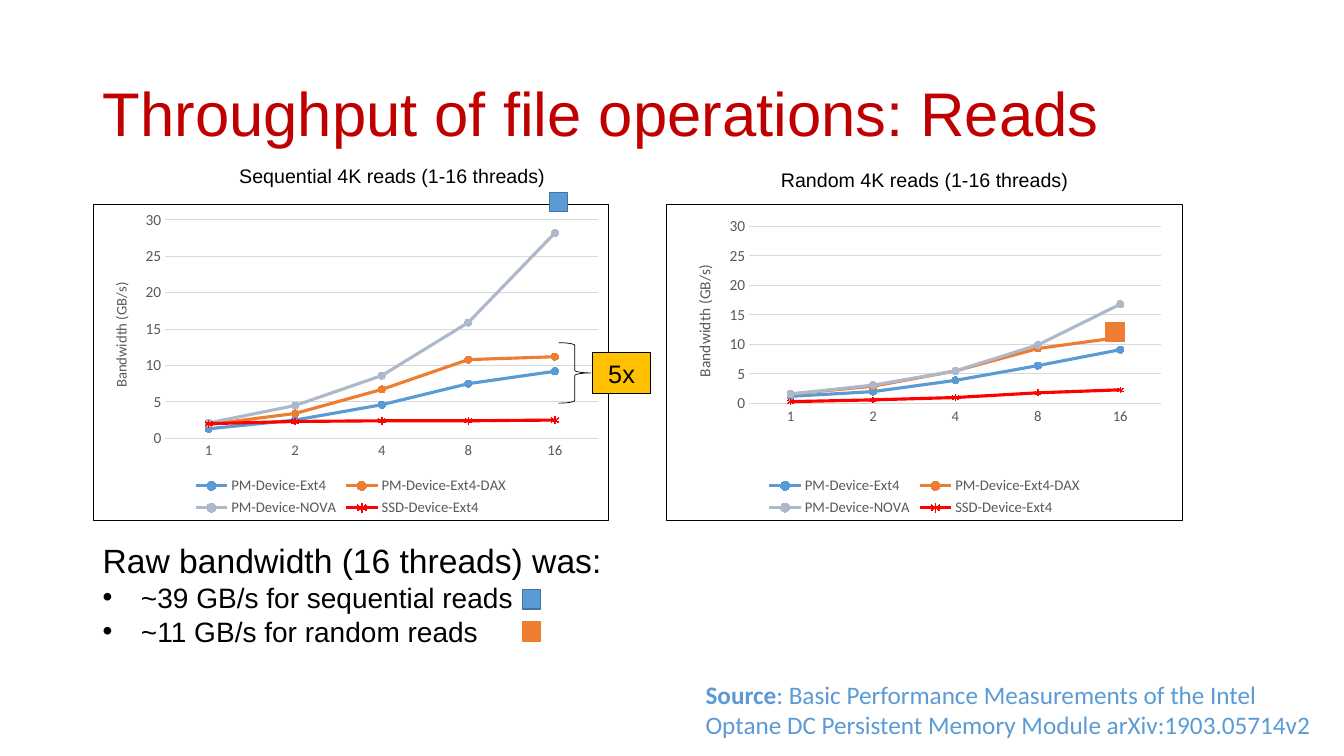
from lxml import etree
from pptx import Presentation
from pptx import util as u
from pptx.chart import data as chart_data
from pptx.dml import color
from pptx.enum import chart as kinds, shapes, text
from pptx.oxml import ns, parse_xml

BLACK, GREY, PALE = "000000", "595959", "D9D9D9"
BLUE, ORANGE = "5B9BD5", "ED7D31"
THREADS = ["1", "2", "4", "8", "16"]
SERIES_COLORS = {
    "PM-Device-Ext4": BLUE,
    "PM-Device-Ext4-DAX": ORANGE,
    "PM-Device-NOVA": "ADB9CA",
    "SSD-Device-Ext4": "FF0000",
}
SEQUENTIAL = [
    [1.3, 2.5, 4.6, 7.5, 9.2],
    [1.9, 3.4, 6.7, 10.8, 11.2],
    [2.1, 4.5, 8.6, 15.9, 28.2],
    [2, 2.3, 2.4, 2.4, 2.5],
]
RANDOM = [
    [1.2, 2, 3.9, 6.4, 9.1],
    [1.6, 2.9, 5.5, 9.3, 11.2],
    [1.6, 3.1, 5.5, 9.9, 16.8],
    [0.3, 0.6, 1, 1.8, 2.3],
]


def rgb(value):
    return color.RGBColor.from_string(value)


def inches(place):
    return [u.Inches(value) for value in place]


def apply(target, values):
    for name, value in values.items():
        setattr(target, name, value)


def style_font(font, size, tone, name="Arial", bold=False):
    apply(font, {"size": u.Pt(size), "name": name, "bold": bold})
    font.color.rgb = rgb(tone)


def style_line(line, tone, width):
    line.color.rgb = rgb(tone)
    line.width = u.Pt(width)


def add_bullet(para):
    props = para._p.get_or_add_pPr()
    props.set("marL", str(u.Inches(0.38)))
    props.set("indent", str(u.Inches(-0.38)))
    font = etree.SubElement(props, ns.qn("a:buFont"))
    font.set("typeface", "Arial")
    etree.SubElement(props, ns.qn("a:buChar")).set("char", "•")


def add_text(page, place, paras, align=None, **frame_values):
    """Each paragraph is (bulleted, [(text, font arguments), ...])."""
    box = page.shapes.add_textbox(*inches(place))
    frame = box.text_frame
    apply(frame, {"word_wrap": True, **frame_values})
    for index, (bulleted, spans) in enumerate(paras):
        para = frame.add_paragraph() if index else frame.paragraphs[0]
        para.alignment = align
        if bulleted:
            add_bullet(para)
        for words, font in spans:
            span = para.add_run()
            span.text = words
            style_font(span.font, *font)
    return box


def add_shape(page, kind, place, fill, line, width, label=""):
    shape = page.shapes.add_shape(kind, *inches(place))
    shape.shadow.inherit = False
    if fill:
        shape.fill.solid()
        shape.fill.fore_color.rgb = rgb(fill)
    else:
        shape.fill.background()
    style_line(shape.line, line, width)
    if label:
        para = shape.text_frame.paragraphs[0]
        para.text = label
        para.alignment = text.PP_ALIGN.CENTER
        style_font(para.font, 18, BLACK)


def set_frame(chart, plot):
    """Fix the inner plot area and give the chart a thin black border."""
    values = "".join(f'<c:{key} val="{value}"/>' for key, value in zip("xywh", plot))
    layout = parse_xml(
        f'<c:layout {ns.nsdecls("c")}><c:manualLayout><c:layoutTarget val="inner"/>'
        f'<c:xMode val="edge"/><c:yMode val="edge"/>{values}</c:manualLayout></c:layout>')
    space = chart._chartSpace
    area = space.chart.plotArea
    for old in area.findall(ns.qn("c:layout")):
        area.remove(old)
    area.insert(0, layout)
    space.chart.addnext(parse_xml(
        f'<c:spPr {ns.nsdecls("c", "a")}><a:noFill/><a:ln w="{u.Pt(0.75)}">'
        f'<a:solidFill><a:srgbClr val="{BLACK}"/></a:solidFill></a:ln></c:spPr>'))


def style_axes(chart, title_size):
    category, value = chart.category_axis, chart.value_axis
    for axis, size in ((category, 10.5), (value, 11)):
        apply(axis, {"major_tick_mark": kinds.XL_TICK_MARK.NONE,
                     "minor_tick_mark": kinds.XL_TICK_MARK.NONE})
        style_font(axis.tick_labels.font, size, GREY, "Calibri")
    style_line(category.format.line, PALE, 0.75)
    apply(value, {"minimum_scale": 0, "maximum_scale": 30, "major_unit": 5,
                  "has_major_gridlines": True})
    value.format.line.fill.background()
    style_line(value.major_gridlines.format.line, PALE, 0.75)
    apply(value.tick_labels, {"number_format": "0", "number_format_is_linked": False})
    para = value.axis_title.text_frame.paragraphs[0]
    para.text = "Bandwidth (GB/s)"
    style_font(para.runs[0].font, title_size, GREY, "Calibri")


def style_series(series, tone, star_size):
    series.smooth = False
    style_line(series.format.line, tone, 2.25)
    marker = series.marker
    style_line(marker.format.line, tone, 0.75)
    if series.name.startswith("SSD"):
        apply(marker, {"style": kinds.XL_MARKER_STYLE.STAR, "size": star_size})
        marker.format.fill.background()
    else:
        apply(marker, {"style": kinds.XL_MARKER_STYLE.CIRCLE, "size": 5})
        marker.format.fill.solid()
        marker.format.fill.fore_color.rgb = rgb(tone)


def add_throughput_chart(page, left, rows, plot, title_size, star_size):
    data = chart_data.CategoryChartData()
    data.categories = THREADS
    for name, values in zip(SERIES_COLORS, rows):
        data.add_series(name, values)
    chart = page.shapes.add_chart(kinds.XL_CHART_TYPE.LINE_MARKERS,
                                  *inches((left, 2.02, 5.12, 3.15)), data).chart
    apply(chart, {"has_title": False, "has_legend": True})
    style_font(chart.font, 10, BLACK, "Calibri")
    apply(chart.legend, {"position": kinds.XL_LEGEND_POSITION.BOTTOM,
                         "include_in_layout": False})
    style_font(chart.legend.font, 10.5, GREY, "Calibri")
    chart.plots[0].vary_by_categories = False
    style_axes(chart, title_size)
    for series in chart.plots[0].series:
        style_series(series, SERIES_COLORS[series.name], star_size)
    set_frame(chart, plot)


def main():
    deck = Presentation()
    apply(deck, {"slide_width": u.Inches(13.33), "slide_height": u.Inches(7.5)})
    page = deck.slides.add_slide(deck.slide_layouts[6])

    # Title
    title = add_text(page, (0.92, 0.43, 11.5, 1.45),
                     [(False, [("Throughput of file operations: Reads", (44, "C00000"))])],
                     vertical_anchor=text.MSO_ANCHOR.MIDDLE)
    title.text_frame.paragraphs[0].line_spacing = 0.9

    # Raw bandwidth summary and source
    add_text(page, (0.92, 5.31, 9.92, 1.18), [
        (False, [("Raw bandwidth (16 threads) was:", (24, BLACK))]),
        (True, [("~39 GB/s for sequential reads", (20, BLACK))]),
        (True, [("~11 GB/s for random reads", (20, BLACK))]),
    ])
    citation = (": Basic Performance Measurements of the Intel Optane DC "
                "Persistent Memory Module arXiv:1903.05714v2")
    add_text(page, (6.9, 6.69, 6.44, 0.71), [
        (False, [("Source", (18, BLUE, "Calibri", True)),
                 (citation, (18, BLUE, "Calibri"))])])

    # Charts with their headings
    add_throughput_chart(page, 6.61, RANDOM, (0.16, 0.07, 0.8, 0.56), 11, 4)
    add_throughput_chart(page, 0.92, SEQUENTIAL, (0.14, 0.05, 0.84, 0.69), 10.5, 5)
    for left, top, pattern in ((7.37, 1.62, "Random"), (2.09, 1.58, "Sequential")):
        heading = f"{pattern} 4K reads (1-16 threads)"
        add_text(page, (left, top, 3.6, 0.34), [(False, [(heading, (14, BLACK))])],
                 text.PP_ALIGN.CENTER)

    # Raw bandwidth markers: one in the summary, one on the chart
    preset = shapes.MSO_SHAPE
    for left, top, fill, line in ((5.18, 5.85, BLUE, "43739E"), (5.45, 1.91, BLUE, "43739E"),
                                  (5.18, 6.17, ORANGE, ORANGE), (10.97, 3.2, ORANGE, ORANGE)):
        add_shape(page, preset.RECTANGLE, (left, top, 0.18, 0.19), fill, line, 1)

    # Speed-up callout
    add_shape(page, preset.RIGHT_BRACE, (5.54, 3.4, 0.32, 0.6), None, BLACK, 0.5)
    add_shape(page, preset.RECTANGLE, (5.88, 3.5, 0.57, 0.4), "FFC000", BLACK, 0.75, "5x")

    deck.save("out.pptx")


if __name__ == "__main__":
    main()
